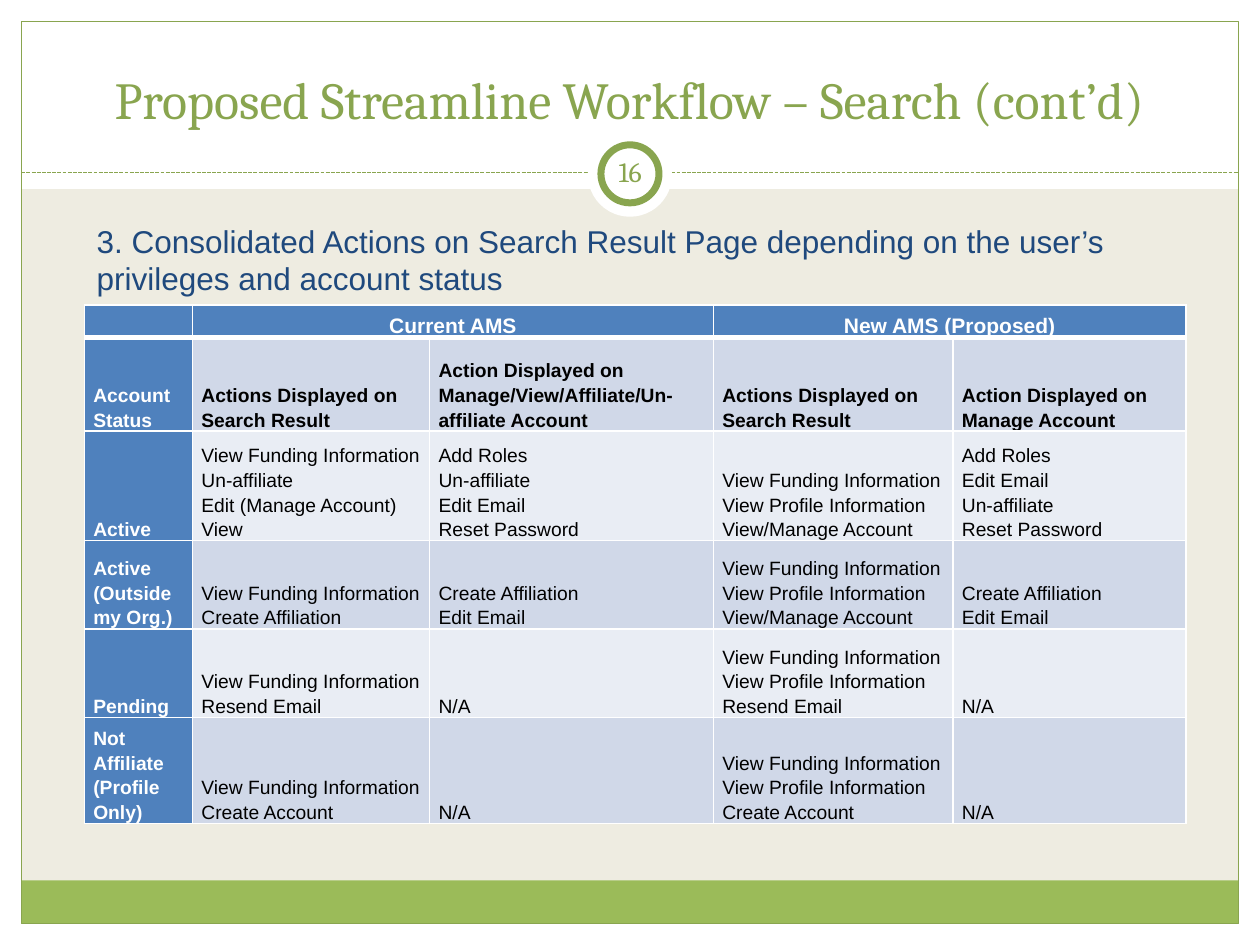
"""Build the slide on consolidated search-result actions by account status."""
from copy import deepcopy
from dataclasses import dataclass

from lxml import etree
from pptx import Presentation
from pptx import util as u
from pptx.dml.color import RGBColor
from pptx.enum import dml, shapes, text
from pptx.oxml import ns

TITLE = "Proposed Streamline Workflow – Search (cont’d)"
NUMBER = "16"
LEAD = ("3. Consolidated Actions on Search Result Page depending on the user’s "
        "privileges and account status")
FUNDING = "View Funding Information"
PROFILE = FUNDING + "\nView Profile Information"
ROWS = [
    ["", "Current AMS", "", "New AMS (Proposed)", ""],
    ["Account Status", "Actions Displayed on Search Result",
     "Action Displayed on Manage/View/Affiliate/Un-affiliate Account",
     "Actions Displayed on Search Result", "Action Displayed on Manage Account"],
    ["Active", FUNDING + "\nUn-affiliate\nEdit (Manage Account)\nView",
     "Add Roles\nUn-affiliate\nEdit Email\nReset Password",
     PROFILE + "\nView/Manage Account",
     "Add Roles\nEdit Email\nUn-affiliate\nReset Password"],
    ["Active (Outside my Org.)", FUNDING + "\nCreate Affiliation",
     "Create Affiliation\nEdit Email", PROFILE + "\nView/Manage Account",
     "Create Affiliation\nEdit Email"],
    ["Pending", FUNDING + "\nResend Email", "N/A", PROFILE + "\nResend Email", "N/A"],
    ["Not Affiliate (Profile Only)", FUNDING + "\nCreate Account", "N/A",
     PROFILE + "\nCreate Account", "N/A"],
]
COLUMN_WIDTHS = [2.18, 4.78, 5.72, 4.83, 4.7]
ROW_HEIGHTS = [0.66, 1.88, 2.21, 1.78, 1.78, 1.78]
HEADER_SPANS = [(1, 2), (3, 4)]
WIDTH, HEIGHT, EDGE = 25.4, 19.05, 0.43
INNER = WIDTH - 2 * EDGE
RULE_Y = 3.48


@dataclass(frozen=True)
class Theme:
    """Colours, fonts and type sizes."""
    page: str = "EEECE1"
    white: str = "FFFFFF"
    black: str = "000000"
    band: str = "9BBB59"
    green: str = "89A54F"
    navy: str = "1F497D"
    header: str = "4F81BD"
    stripes: tuple = ("E9EDF4", "D0D8E8")
    serif: str = "Cambria"
    sans: str = "Arial"
    title_size: float = 29.7
    lead_size: float = 18
    number_size: float = 16
    header_size: float = 12
    cell_size: float = 11


THEME = Theme()
ALIGN, ANCHOR, KIND = text.PP_ALIGN, text.MSO_ANCHOR, shapes.MSO_SHAPE


def write(frame, words, *, size, color, font=THEME.sans, bold=False,
          align=ALIGN.LEFT, spacing=None):
    """Fill a text frame with one formatted paragraph."""
    frame.word_wrap = True
    para = frame.paragraphs[0]
    para.text = words.replace("\n", "\v")
    para.alignment = align
    para.line_spacing = spacing
    for span in para.runs:
        span.font.size = u.Pt(size)
        span.font.name = font
        span.font.bold = bold
        span.font.color.rgb = RGBColor.from_string(color)
    for line_break in para._p.findall(ns.qn("a:br")):
        line_break.insert(0, deepcopy(para.runs[0]._r.rPr))
    if not words:
        para._p.get_or_add_endParaRPr().set("sz", str(size * 100))


def add_text(page, words, left, top, width, height, *, anchor=ANCHOR.TOP,
             inset=0.25, **style):
    """Place a text box."""
    frame = page.shapes.add_textbox(*map(u.Cm, (left, top, width, height))).text_frame
    frame.vertical_anchor = anchor
    frame.margin_left = frame.margin_right = u.Cm(inset)
    frame.margin_top = frame.margin_bottom = u.Cm(0.13)
    write(frame, words, **style)


def add_block(page, left, top, width, height, *, kind=KIND.RECTANGLE,
              fill=None, line=None, weight=0.75):
    """Place a plain shape."""
    box = page.shapes.add_shape(kind, *map(u.Cm, (left, top, width, height)))
    box.shadow.inherit = False
    if fill:
        box.fill.solid()
        box.fill.fore_color.rgb = RGBColor.from_string(fill)
    else:
        box.fill.background()
    if line:
        box.line.color.rgb = RGBColor.from_string(line)
        box.line.width = u.Pt(weight)
    else:
        box.line.fill.background()


def add_disc(page, top, size, **style):
    """Place a circle centred across the page."""
    add_block(page, (WIDTH - size) / 2, top, size, size, kind=KIND.OVAL, **style)


def add_rule(page):
    """Draw the dashed line below the title."""
    rule = page.shapes.add_connector(
        shapes.MSO_CONNECTOR.STRAIGHT,
        *map(u.Cm, (EDGE, RULE_Y, WIDTH - EDGE, RULE_Y)))
    rule.line.color.rgb = RGBColor.from_string(THEME.green)
    rule.line.width = u.Pt(0.75)
    rule.line.dash_style = dml.MSO_LINE.SQUARE_DOT
    etree.SubElement(rule._element.spPr, ns.qn("a:effectLst"))


def add_borders(cell, row):
    """Outline a cell in white, with a thick line below the header."""
    properties = cell._tc.get_or_add_tcPr()
    for side in "LRTB":
        weight = 3 if (row, side) in ((0, "B"), (1, "T")) else 1
        edge = etree.SubElement(properties, ns.qn("a:ln" + side), w=str(u.Pt(weight)))
        paint = etree.SubElement(edge, ns.qn("a:solidFill"))
        etree.SubElement(paint, ns.qn("a:srgbClr"), val=THEME.white)


def add_actions_table(page):
    """Build the table of actions."""
    table = page.shapes.add_table(
        len(ROWS), len(COLUMN_WIDTHS), u.Cm(1.7), u.Cm(6.15),
        u.Cm(sum(COLUMN_WIDTHS)), u.Cm(sum(ROW_HEIGHTS))).table
    for column, width in zip(table.columns, COLUMN_WIDTHS):
        column.width = u.Cm(width)
    for row, height in zip(table.rows, ROW_HEIGHTS):
        row.height = u.Cm(height)
    for r, words_in_row in enumerate(ROWS):
        for c, words in enumerate(words_in_row):
            cell = table.cell(r, c)
            heading = r == 0 or c == 0
            cell.margin_left = cell.margin_right = u.Cm(0.18)
            cell.margin_top = cell.margin_bottom = 0
            cell.vertical_anchor = ANCHOR.BOTTOM
            add_borders(cell, r)
            cell.fill.solid()
            cell.fill.fore_color.rgb = RGBColor.from_string(
                THEME.header if heading else THEME.stripes[r % 2])
            write(cell.text_frame, words, spacing=1.15, bold=heading or r == 1,
                  size=THEME.cell_size if r else THEME.header_size,
                  color=THEME.white if heading else THEME.black,
                  align=ALIGN.LEFT if r else ALIGN.CENTER)
    for first, last in HEADER_SPANS:
        table.cell(0, first).merge(table.cell(0, last))


def main():
    """Assemble and save the deck."""
    deck = Presentation()
    deck.slide_width, deck.slide_height = u.Cm(WIDTH), u.Cm(HEIGHT)
    page = deck.slides.add_slide(deck.slide_layouts[6])
    page.background.fill.solid()
    page.background.fill.fore_color.rgb = RGBColor.from_string(THEME.page)

    for area in ((0, HEIGHT - EDGE, WIDTH, EDGE), (0, 0, WIDTH, 3.81),
                 (0, 0, EDGE, HEIGHT), (WIDTH - EDGE, 0, EDGE, HEIGHT)):
        add_block(page, *area, fill=THEME.white)
    add_block(page, EDGE, 17.75, INNER, 0.87, fill=THEME.band)
    add_block(page, EDGE, EDGE, INNER, HEIGHT - 2 * EDGE, line=THEME.green)
    add_rule(page)
    add_disc(page, 2.67, 1.7, fill=THEME.white)
    add_disc(page, 2.92, 1.17, fill=THEME.white, line=THEME.green, weight=4)

    add_text(page, TITLE, 0.85, 0.64, 23.7, 2.11, anchor=ANCHOR.BOTTOM,
             size=THEME.title_size, color=THEME.green, font=THEME.serif,
             align=ALIGN.CENTER)
    add_text(page, NUMBER, 12.07, 2.84, 1.27, 1.22, anchor=ANCHOR.MIDDLE, inset=0.13,
             size=THEME.number_size, color=THEME.green, font=THEME.serif,
             align=ALIGN.CENTER)
    add_actions_table(page)
    add_text(page, LEAD, 1.7, 4.34, 22.43, 1.8, size=THEME.lead_size, color=THEME.navy)
    deck.save("out.pptx")


if __name__ == "__main__":
    main()
